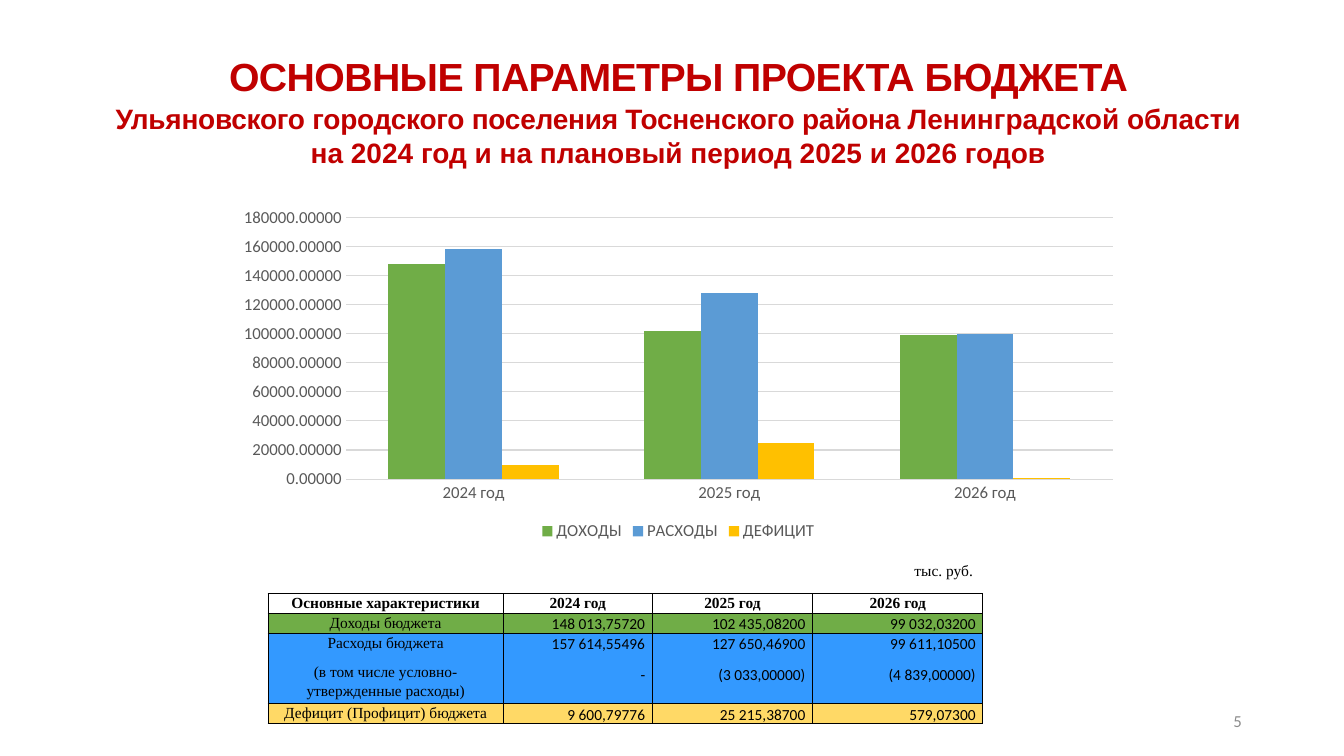
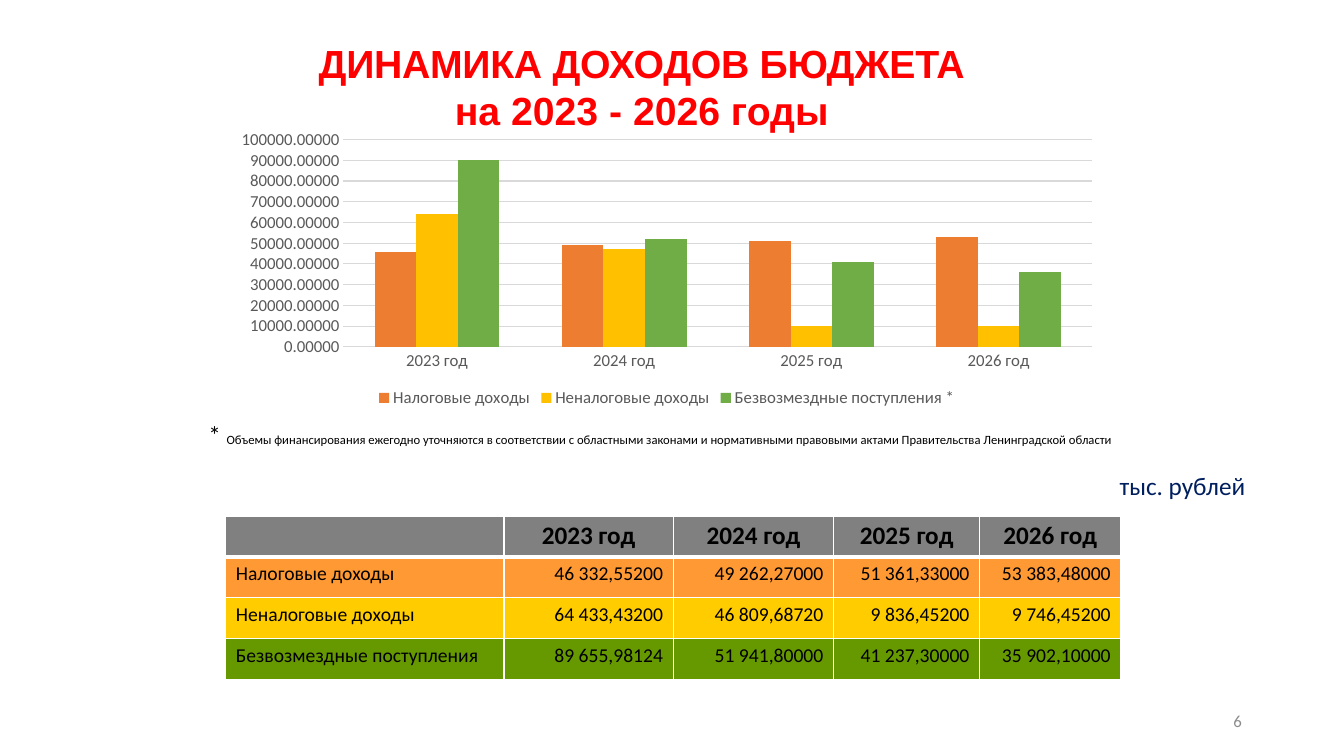
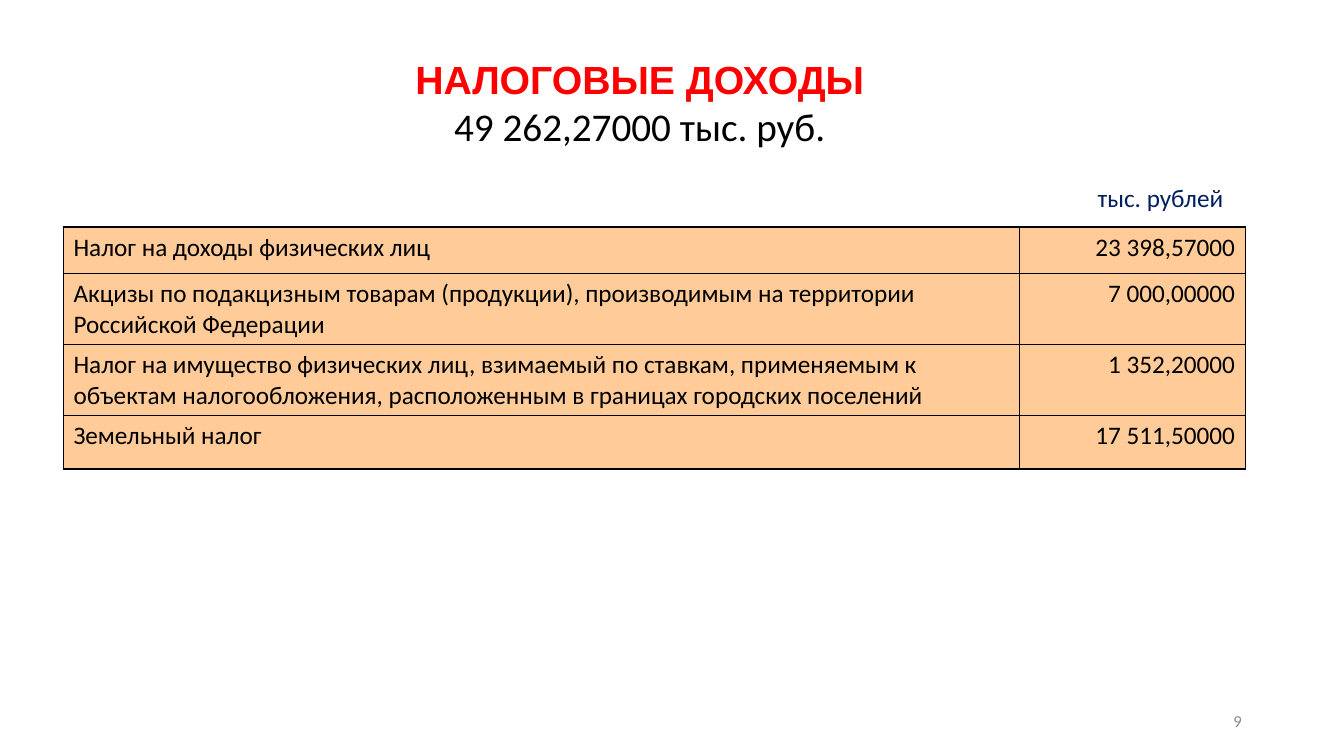
from lxml.etree import SubElement
from pptx import Presentation
from pptx.chart.data import CategoryChartData
from pptx.dml.color import RGBColor
from pptx.enum.chart import XL_CHART_TYPE as ChartType
from pptx.enum.chart import XL_LEGEND_POSITION as LegendPosition
from pptx.enum.chart import XL_TICK_MARK as TickMark
from pptx.enum.text import MSO_ANCHOR as Anchor
from pptx.enum.text import PP_ALIGN as Align
from pptx.oxml.ns import qn
from pptx.util import Cm, Pt

COLORS = {
    "black": "000000", "white": "FFFFFF", "dark red": "C00000", "red": "FF0000",
    "navy": "001F5F", "page number": "8C8C8C", "axis text": "595959",
    "grid": "D9D9D9", "green": "70AD47", "blue": "5B9BD5", "gold": "FFC000",
    "orange": "ED7D31", "bright blue": "3399FF", "pale gold": "FFD966",
    "gray": "808080", "tax": "FF9933", "non-tax": "FFCC00", "grants": "669900",
    "peach": "FFCC99",
}
SERIF = "Times New Roman"


def rgb(name):
    return RGBColor.from_string(COLORS[name])


def write(paragraph, text, size=18, font="Calibri", color="black", bold=False,
          align=Align.LEFT, spacing=0):
    """Append one formatted run; spacing is in hundredths of a point."""
    paragraph.alignment = align
    run = paragraph.add_run()
    run.text = text
    run.font.size = Pt(size)
    run.font.name = font
    run.font.bold = bold
    run.font.color.rgb = rgb(color)
    if spacing:
        run.font._element.set("spc", str(spacing))


def add_text(slide, box, paragraphs, anchor=Anchor.TOP):
    """Each paragraph is a list of (text, format) runs."""
    shape = slide.shapes.add_textbox(*map(Cm, box))
    frame = shape.text_frame
    frame.word_wrap = True
    frame.vertical_anchor = anchor
    for index, runs in enumerate(paragraphs):
        paragraph = frame.add_paragraph() if index else frame.paragraphs[0]
        for text, style in runs:
            write(paragraph, text, **style)
    return frame


def heading(color, size=28, spacing=0):
    return dict(size=size, font="Arial", color=color, bold=True,
                align=Align.CENTER, spacing=spacing)


def add_unit(slide, box, align):
    add_text(slide, box, [[("тыс. рублей", dict(color="navy", align=align))]])


def add_page_slide(presentation, number):
    slide = presentation.slides.add_slide(presentation.slide_layouts[6])
    style = dict(size=12, color="page number", align=Align.RIGHT)
    add_text(slide, (23.93, 17.65, 7.62, 1.02), [[(str(number), style)]], Anchor.MIDDLE)
    return slide


def add_column_chart(slide, box, categories, series):
    data = CategoryChartData(number_format="0.00000")
    data.categories = categories
    for name, _, values in series:
        data.add_series(name, values)
    chart = slide.shapes.add_chart(ChartType.COLUMN_CLUSTERED, *map(Cm, box), data).chart
    chart.has_title = False
    chart.font.name = "Calibri"
    chart.font.size = Pt(12)
    chart.font.color.rgb = rgb("axis text")

    # Columns
    plot = chart.plots[0]
    plot.gap_width = 150
    plot.overlap = 0
    plot.vary_by_categories = False
    for column, (_, color, _) in zip(plot.series, series):
        column.format.fill.solid()
        column.format.fill.fore_color.rgb = rgb(color)

    # Axes and grid
    for axis in (chart.category_axis, chart.value_axis):
        axis.major_tick_mark = axis.minor_tick_mark = TickMark.NONE
        axis.format.line.fill.background()
    chart.value_axis.tick_labels.number_format = "0.00000"
    chart.value_axis.tick_labels.number_format_is_linked = False
    grid = chart.value_axis.major_gridlines.format.line
    grid.color.rgb = rgb("grid")
    grid.width = Pt(0.75)

    # Legend
    chart.has_legend = True
    chart.legend.position = LegendPosition.BOTTOM
    chart.legend.include_in_layout = False


def set_borders(cell, color, bottom):
    properties = cell._tc.get_or_add_tcPr()
    for side in "LRTB":
        width = Pt(bottom if side == "B" else 1)
        line = SubElement(properties, qn(f"a:ln{side}"), w=str(width))
        fill = SubElement(line, qn("a:solidFill"))
        SubElement(fill, qn("a:srgbClr"), val=COLORS[color])


def add_grid(slide, origin, widths, heights, rows, fills, cell_style,
             border="black", header_bottom=1, compact=False):
    """cell_style(row, column) gives the run format; a newline splits paragraphs."""
    frame = slide.shapes.add_table(len(heights), len(widths), *map(Cm, origin),
                                   Cm(sum(widths)), Cm(sum(heights)))
    table = frame.table
    table.first_row = table.horz_banding = False
    for column, width in zip(table.columns, widths):
        column.width = Cm(width)
    for r, (row, height, fill) in enumerate(zip(rows, heights, fills)):
        table.rows[r].height = Cm(height)
        for c, text in enumerate(row):
            cell = table.cell(r, c)
            set_borders(cell, border, 1 if r else header_bottom)
            if fill:
                cell.fill.solid()
                cell.fill.fore_color.rgb = rgb(fill)
            else:
                cell.fill.background()
            if compact:
                cell.margin_left = cell.margin_right = Cm(0.18)
                cell.margin_top = cell.margin_bottom = 0
            for index, part in enumerate(text.split("\n")):
                paragraphs = cell.text_frame.paragraphs
                paragraph = cell.text_frame.add_paragraph() if index else paragraphs[0]
                if compact:
                    paragraph.line_spacing = 1.07
                    paragraph.space_after = Pt(8)
                if part:
                    write(paragraph, part, **cell_style(r, c))


def parameters_cell(row, column):
    label = row == 0 or column == 0
    return dict(size=11, font=SERIF if label else "Calibri", bold=row == 0,
                align=Align.CENTER if label else Align.RIGHT)


def dynamics_cell(row, column):
    if row == 0:
        return dict(size=18, bold=True, align=Align.CENTER)
    return dict(size=14, align=Align.RIGHT if column else Align.LEFT)


def taxes_cell(row, column):
    return dict(size=18, align=Align.RIGHT if column else Align.LEFT)


def build_parameters(presentation):
    slide = add_page_slide(presentation, 5)
    subtitle = heading("dark red", 20)
    title = add_text(slide, (1.83, 1.19, 30.53, 3.23), [
        [("ОСНОВНЫЕ ПАРАМЕТРЫ ПРОЕКТА БЮДЖЕТА", heading("dark red", spacing=-40))],
        [("Ульяновского городского поселения Тосненского района ",
          heading("dark red", 20, -20)),
         ("Ленинградской области", subtitle)],
        [("на 2024 год и на плановый период 2025 и 2026 годов", subtitle)],
    ])
    title.paragraphs[1].line_spacing = 1.03
    title.paragraphs[1].space_before = Pt(1)

    years = ["2024 год", "2025 год", "2026 год"]
    add_column_chart(slide, (5.69, 5.05, 22.81, 8.69), years, [
        ("ДОХОДЫ", "green", (148000, 102000, 99000)),
        ("РАСХОДЫ", "blue", (158000, 128000, 100000)),
        ("ДЕФИЦИТ", "gold", (10000, 25000, 1000)),
    ])
    add_text(slide, (6.76, 14, 18.01, 0.74),
             [[("тыс. руб.", dict(size=11, font=SERIF, align=Align.RIGHT))]],
             Anchor.MIDDLE)
    rows = [
        ["Основные характеристики", *years],
        ["Доходы бюджета", "148 013,75720", "102 435,08200", "99 032,03200"],
        ["Расходы бюджета\n(в том числе условно-утвержденные расходы)",
         "157 614,55496\n-", "127 650,46900\n(3 033,00000)",
         "99 611,10500\n(4 839,00000)"],
        ["Дефицит (Профицит) бюджета", "9 600,79776", "25 215,38700", "579,07300"],
    ]
    add_grid(slide, (6.76, 14.96), [5.92, 3.76, 4.04, 4.29], [0.5, 0.5, 1.77, 0.5],
             rows, [None, "green", "bright blue", "pale gold"], parameters_cell,
             compact=True)


def build_dynamics(presentation):
    slide = add_page_slide(presentation, 6)
    add_text(slide, (7.7, 0.86, 16.94, 2.64), [
        [("ДИНАМИКА ДОХОДОВ БЮДЖЕТА", heading("red", spacing=-20))],
        [("на 2023 - 2026 годы", heading("red"))],
    ])
    add_unit(slide, (27.46, 11.73, 4.17, 1.02), Align.RIGHT)
    years = ["2023 год", "2024 год", "2025 год", "2026 год"]
    add_column_chart(slide, (5.64, 3.12, 22.33, 7.26), years, [
        ("Налоговые доходы", "orange", (46000, 49000, 51000, 53000)),
        ("Неналоговые доходы", "gold", (64000, 47000, 10000, 10000)),
        ("Безвозмездные поступления *", "green", (90000, 52000, 41000, 36000)),
    ])
    note = ("Объемы финансирования ежегодно уточняются в соответствии с областными "
            "законами и нормативными правовыми актами Правительства "
            "Ленинградской области")
    add_text(slide, (5, 10.44, 25.6, 1.02), [[("* ", {}), (note, dict(size=9))]])
    rows = [
        ["", *years],
        ["Налоговые доходы", "46 332,55200", "49 262,27000", "51 361,33000",
         "53 383,48000"],
        ["Неналоговые доходы", "64 433,43200", "46 809,68720", "9 836,45200",
         "9 746,45200"],
        ["Безвозмездные поступления", "89 655,98124", "51 941,80000", "41 237,30000",
         "35 902,10000"],
    ]
    add_grid(slide, (5.69, 13), [7.01, 4.27, 4.04, 3.68, 3.56], [1.03] * 4, rows,
             ["gray", "tax", "non-tax", "grants"], dynamics_cell,
             border="white", header_bottom=3)


def build_taxes(presentation):
    slide = add_page_slide(presentation, 9)
    add_text(slide, (7.65, 1.27, 16.94, 2.64), [
        [("НАЛОГОВЫЕ ДОХОДЫ", heading("red"))],
        [("49 262,27000 тыс. руб.", dict(size=28, align=Align.CENTER))],
    ])
    rows = [
        ["Налог на доходы физических лиц", "23 398,57000"],
        ["Акцизы по подакцизным товарам (продукции), производимым на территории "
         "Российской Федерации", "7 000,00000"],
        ["Налог на имущество физических лиц, взимаемый по ставкам, применяемым к "
         "объектам налогообложения, расположенным в границах городских поселений",
         "1 352,20000"],
        ["Земельный налог", "17 511,50000"],
    ]
    add_grid(slide, (1.6, 5.72), [24.1, 5.68], [1.17, 1.79, 1.79, 1.35], rows,
             ["peach"] * 4, taxes_cell)
    add_unit(slide, (27.41, 4.47, 3.99, 1.02), Align.LEFT)


def main():
    presentation = Presentation()
    presentation.slide_width = Cm(33.87)
    presentation.slide_height = Cm(19.05)
    build_parameters(presentation)
    build_dynamics(presentation)
    build_taxes(presentation)
    presentation.save("out.pptx")


if __name__ == "__main__":
    main()
